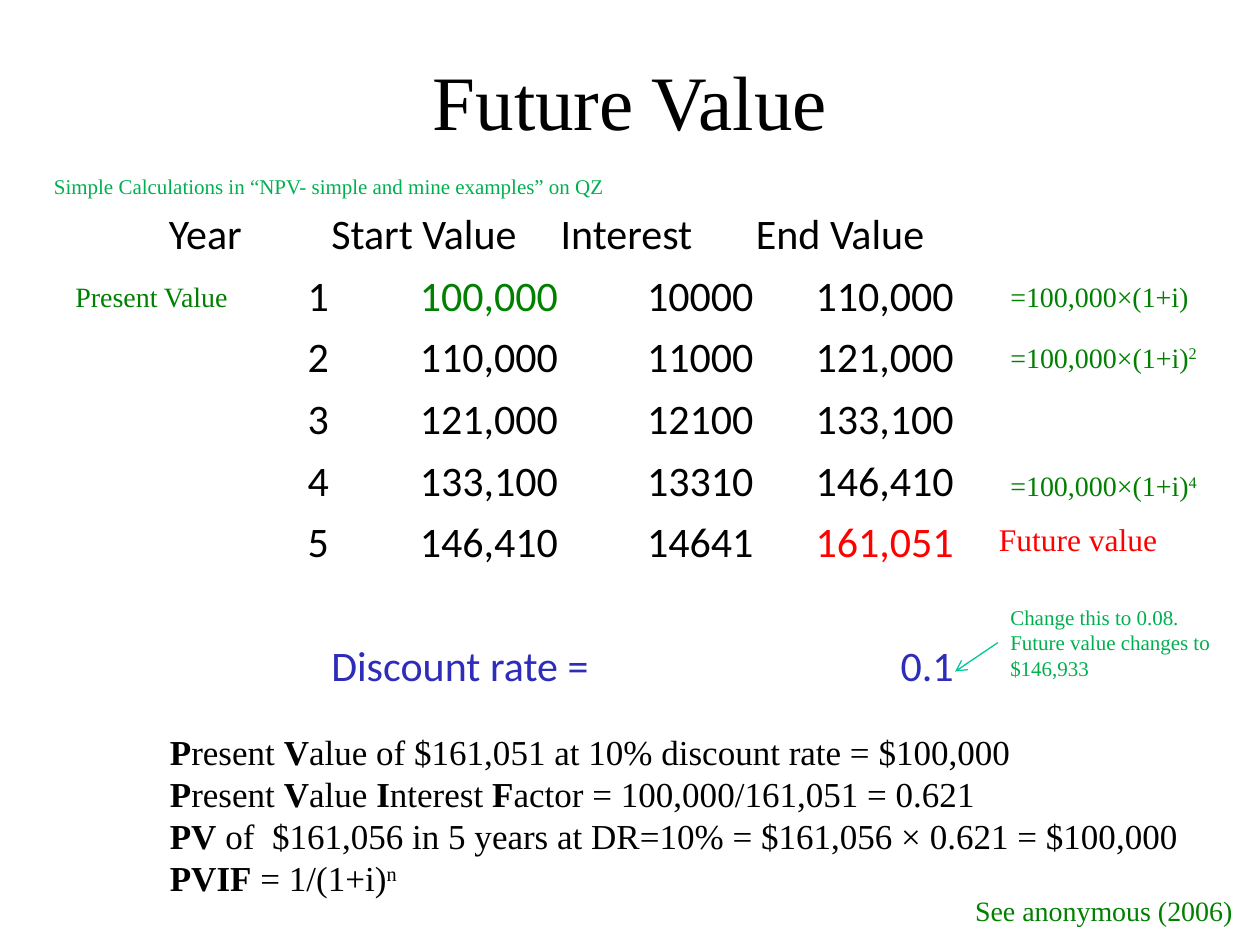
from pptx import Presentation
from pptx import util as u
from pptx.dml.color import RGBColor
from pptx.enum import shapes, text
from pptx.oxml import parse_xml
from pptx.oxml.ns import nsdecls

SERIF = "Times New Roman"
BLACK, GREEN, RED, BLUE = "000000", "008000", "FF0000", "2D2DB9"
LIGHT_GREEN, TEAL = "00B050", "00C896"


def write(frame, lines, size=16, color=BLACK, font=SERIF, align=text.PP_ALIGN.LEFT):
    """Fill a text frame; *stars* enclose bold text, a caret starts a superscript."""
    for number, line in enumerate(lines.split("\n")):
        para = frame.paragraphs[0] if number == 0 else frame.add_paragraph()
        para.alignment = align
        base, _, power = line.partition("^")
        pieces = [(part, i % 2 == 1, False) for i, part in enumerate(base.split("*"))]
        pieces.append((power, False, True))
        for words, bold, raised in pieces:
            if not words:
                continue
            span = para.add_run()
            span.text = words
            span.font.size = u.Pt(size)
            span.font.name = font
            span.font.bold = bold
            span.font.color.rgb = RGBColor.from_string(color)
            if raised:
                span.font._element.set("baseline", "30000")


deck = Presentation()
deck.slide_width, deck.slide_height = u.Inches(10), u.Inches(7.5)
page = deck.slides.add_slide(deck.slide_layouts[5])

title = page.shapes.title
title.left, title.top = u.Inches(0.75), u.Inches(0.17)
title.width, title.height = u.Inches(8.5), u.Inches(1.25)
title.text_frame.vertical_anchor = text.MSO_ANCHOR.MIDDLE
write(title.text_frame, "Future Value", size=44, align=text.PP_ALIGN.CENTER)

# Growth table
rows = [
    ["Year", "Start Value", "Interest", "End Value"],
    ["1", "100,000", "10000", "110,000"],
    ["2", "110,000", "11000", "121,000"],
    ["3", "121,000", "12100", "133,100"],
    ["4", "133,100", "13310", "146,410"],
    ["5", "146,410", "14641", "161,051"],
    ["", "", "", ""],
    ["", "Discount rate =", "", "0.1"],
]
cell_colors = {(1, 1): GREEN, (5, 3): RED, (7, 1): BLUE, (7, 3): BLUE}
row_height = 0.49
table = page.shapes.add_table(
    len(rows), 4, u.Inches(1.33), u.Inches(1.58),
    u.Inches(6.25), u.Inches(row_height * len(rows))).table
table.first_row = table.horz_banding = False
for column, width in zip(table.columns, (1.29, 1.82, 1.55, 1.59)):
    column.width = u.Inches(width)
for r, values in enumerate(rows):
    table.rows[r].height = u.Inches(row_height)
    for c, value in enumerate(values):
        cell = table.cell(r, c)
        cell.fill.background()
        cell.vertical_anchor = text.MSO_ANCHOR.BOTTOM
        cell.margin_left = cell.margin_right = cell.margin_top = u.Inches(0.01)
        cell.margin_bottom = 0
        is_label = r == 0 or value.startswith("Discount")
        write(cell.text_frame, value, size=24, font="Calibri",
              color=cell_colors.get((r, c), BLACK),
              align=text.PP_ALIGN.LEFT if is_label else text.PP_ALIGN.RIGHT)
table.cell(7, 1).merge(table.cell(7, 2))

# Remarks around the table: left, top, width, height, size, colour, words
summary = """*P*resent *V*alue of $161,051 at 10% discount rate = $100,000
*P*resent *V*alue *I*nterest *F*actor = 100,000/161,051 = 0.621
*PV* of  $161,056 in 5 years at DR=10% = $161,056 × 0.621 = $100,000
*PVIF* = 1/(1+i)^n"""
advice = "Change this to 0.08.  Future value changes to $146,933"
formula = "=100,000×(1+i)"
formula_left = 7.92
remarks = [
    (0.5, 2.17, 1.43, 0.37, 16, GREEN, "Present Value"),
    (7.83, 4.08, 1.47, 0.4, 18, RED, "Future value"),
    (7.64, 7.04, 2.27, 0.37, 16, GREEN, "See anonymous (2006)"),
    (1.25, 5.75, 8.26, 1.45, 20, BLACK, summary),
    (formula_left, 2.17, 1.64, 0.37, 16, GREEN, formula),
    (formula_left, 2.65, 1.75, 0.37, 16, GREEN, formula + "^2"),
    (formula_left, 3.67, 1.75, 0.37, 16, GREEN, formula + "^4"),
    (0.33, 1.33, 4.63, 0.3, 12, LIGHT_GREEN,
     "Simple Calculations in “NPV- simple and mine examples” on QZ"),
    (formula_left, 4.75, 1.83, 0.71, 12, LIGHT_GREEN, advice),
]
for left, top, width, height, size, color, words in remarks:
    box = page.shapes.add_textbox(*map(u.Inches, (left, top, width, height)))
    box.text_frame.word_wrap = words == advice
    box.text_frame.auto_size = text.MSO_AUTO_SIZE.SHAPE_TO_FIT_TEXT
    write(box.text_frame, words, size=size, color=color)

# Arrow from the advice to the discount rate
arrow = page.shapes.add_connector(
    shapes.MSO_CONNECTOR.STRAIGHT, *map(u.Inches, (formula_left, 5.1, 7.58, 5.33)))
arrow.line.color.rgb = RGBColor.from_string(TEAL)
arrow.line.width = u.Pt(0.75)
arrow.line._get_or_add_ln().append(parse_xml(f'<a:tailEnd {nsdecls("a")} type="arrow"/>'))
arrow._element.spPr.append(parse_xml(f'<a:effectLst {nsdecls("a")}/>'))

deck.save("out.pptx")
